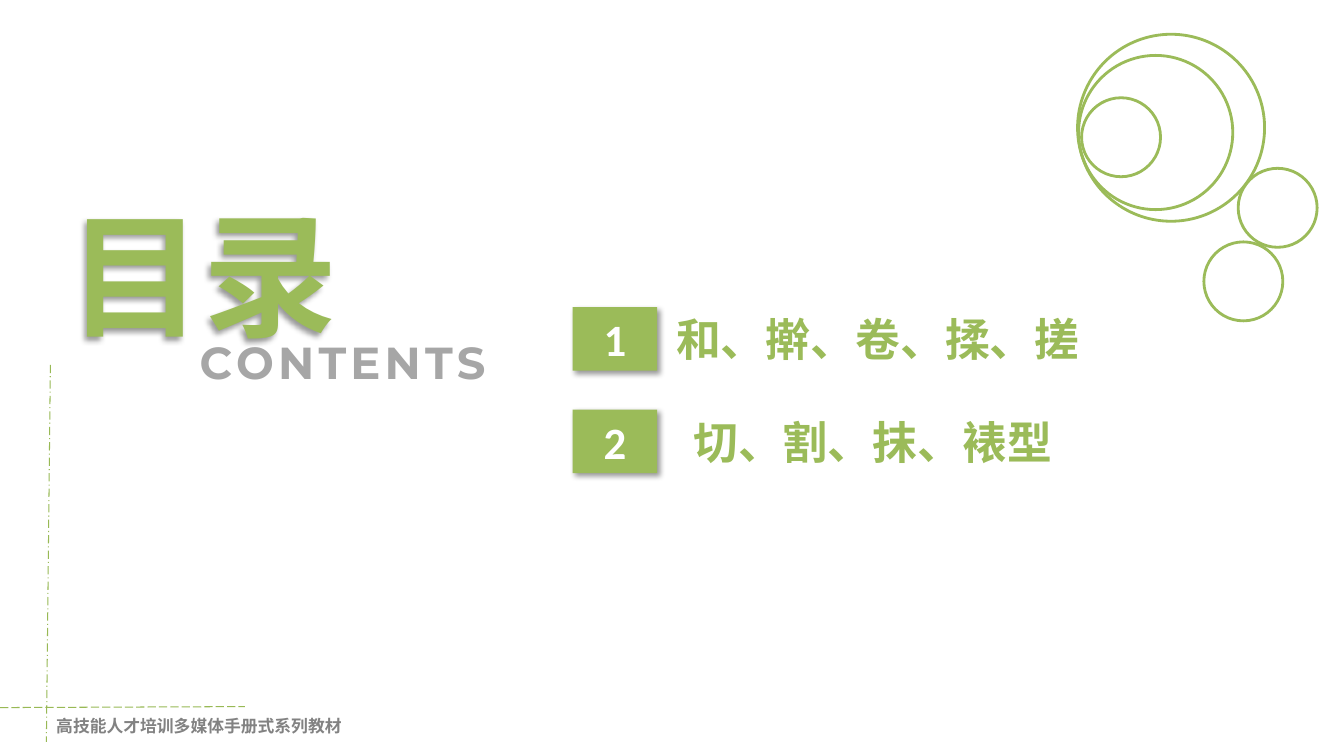
import dataclasses
import typing

import lxml.etree
import pptx
import pptx.dml.color
import pptx.enum.dml
import pptx.enum.shapes
import pptx.enum.text
import pptx.oxml.ns
import pptx.util

RGBColor = pptx.dml.color.RGBColor
ALIGN = pptx.enum.text.PP_ALIGN
DASH = pptx.enum.dml.MSO_LINE
SHAPE = pptx.enum.shapes.MSO_SHAPE
qn = pptx.oxml.ns.qn

GREEN = RGBColor(0x9B, 0xBB, 0x59)
GUIDE_GREEN = RGBColor(0x98, 0xB9, 0x55)
CONTENTS_GREY = RGBColor(0xA6, 0xA6, 0xA6)
FOOTER_GREY = RGBColor(0x82, 0x82, 0x82)
WHITE = RGBColor(0xFF, 0xFF, 0xFF)
BLACK = RGBColor(0x00, 0x00, 0x00)

CJK_FONT = "Noto Sans CJK SC"
SLIDE_WIDTH = pptx.util.Inches(13.33)
SLIDE_HEIGHT = pptx.util.Inches(7.5)
COLUMNS, ROWS = 80, 45

BADGE_COLUMN, BADGE_COLUMNS, BADGE_ROWS = 34.08, 5.04, 3.78
FIRST_ENTRY_ROW, ENTRY_PITCH = 18.28, 6.1


@dataclasses.dataclass(frozen=True)
class Area:
    column: float
    row: float
    columns: float
    rows: float

    def emu(self) -> tuple[int, int, int, int]:
        return (across(self.column), down(self.row),
                across(self.columns), down(self.rows))


@dataclasses.dataclass(frozen=True)
class Style:
    size: float
    font: str
    color: RGBColor
    align: ALIGN = ALIGN.CENTER
    spacing: float = 0


@dataclasses.dataclass(frozen=True)
class Shadow:
    blur: float
    distance: float
    degrees: int


@dataclasses.dataclass(frozen=True)
class Caption:
    text: str
    area: Area
    style: Style
    shadow: typing.Optional[Shadow] = None


@dataclasses.dataclass(frozen=True)
class Guide:
    start: tuple[float, float]
    end: tuple[float, float]
    dash: DASH


@dataclasses.dataclass(frozen=True)
class Ring:
    column: float
    row: float
    diameter: float


@dataclasses.dataclass(frozen=True)
class Entry:
    topic: str
    column: float
    columns: float


BADGE_STYLE = Style(32, "Calibri", WHITE)
TOPIC_STYLE = Style(32, CJK_FONT, GREEN, ALIGN.LEFT)
SOFT_SHADOW = Shadow(4, 3, 45)

GUIDES = [
    Guide((3, 21.72), (2.76, 44.16), DASH.LONG_DASH_DOT),
    Guide((0, 42.12), (14.58, 42.06), DASH.LONG_DASH),
]
RINGS = [
    Ring(64.14, 2.04, 11.13),
    Ring(64.2, 3.3, 9.18),
    Ring(73.7, 10.02, 4.7),
    Ring(64.38, 5.82, 4.7),
    Ring(71.66, 14.4, 4.7),
]
CAPTIONS = [
    Caption("高技能人才培训多媒体手册式系列教材", Area(2.76, 42.3, 18.36, 1.8),
            Style(12, "Times New Roman", FOOTER_GREY, ALIGN.LEFT)),
    Caption("目录", Area(0.3, 11.16, 23.58, 10.32),
            Style(96, CJK_FONT, GREEN), Shadow(4, 3, 135)),
    Caption("CONTENTS", Area(10.5, 19.62, 19.8, 3.84),
            Style(32, "Montserrat", CONTENTS_GREY, spacing=3)),
]
ENTRIES = [
    Entry("和、擀、卷、揉、搓", 39.66, 26),
    Entry("切、割、抹、裱型", 40.68, 23.5),
]


def across(columns: float) -> int:
    return round(SLIDE_WIDTH * columns / COLUMNS)


def down(rows: float) -> int:
    return round(SLIDE_HEIGHT * rows / ROWS)


def write(frame: pptx.text.text.TextFrame, text: str, style: Style) -> None:
    paragraph = frame.paragraphs[0]
    paragraph.text = text
    paragraph.alignment = style.align
    font = paragraph.font
    font.size = pptx.util.Pt(style.size)
    font.name = style.font
    font.bold = True
    font.color.rgb = style.color
    properties = paragraph._p.pPr.find(qn("a:defRPr"))
    if style.spacing:
        properties.set("spc", str(round(style.spacing * 100)))
    east_asian = lxml.etree.Element(qn("a:ea"), typeface=CJK_FONT)
    properties.find(qn("a:latin")).addnext(east_asian)


def cast_shadow(shape: pptx.shapes.autoshape.Shape, shadow: Shadow) -> None:
    shape.shadow.inherit = False
    effects = shape._element.spPr.find(qn("a:effectLst"))
    outer = lxml.etree.SubElement(
        effects, qn("a:outerShdw"),
        blurRad=str(pptx.util.Pt(shadow.blur)),
        dist=str(pptx.util.Pt(shadow.distance)),
        dir=str(shadow.degrees * 60000), algn="ctr", rotWithShape="0")
    color = lxml.etree.SubElement(outer, qn("a:srgbClr"), val=str(BLACK))
    lxml.etree.SubElement(color, qn("a:alpha"), val="40000")


def draw_caption(slide: pptx.slide.Slide, caption: Caption) -> None:
    box = slide.shapes.add_textbox(*caption.area.emu())
    box.text_frame.word_wrap = True
    write(box.text_frame, caption.text, caption.style)
    if caption.shadow:
        cast_shadow(box, caption.shadow)


def draw_guide(slide: pptx.slide.Slide, guide: Guide) -> None:
    (x1, y1), (x2, y2) = guide.start, guide.end
    connector = slide.shapes.add_connector(
        pptx.enum.shapes.MSO_CONNECTOR.STRAIGHT,
        across(x1), down(y1), across(x2), down(y2))
    connector.line.color.rgb = GUIDE_GREEN
    connector.line.width = pptx.util.Pt(0.75)
    connector.line.dash_style = guide.dash
    lxml.etree.SubElement(connector._element.spPr, qn("a:effectLst"))


def draw_ring(slide: pptx.slide.Slide, ring: Ring) -> None:
    area = Area(ring.column, ring.row, ring.diameter, ring.diameter)
    circle = slide.shapes.add_shape(SHAPE.OVAL, *area.emu())
    circle.shadow.inherit = False
    circle.fill.background()
    circle.line.color.rgb = GREEN
    circle.line.width = pptx.util.Pt(2)


def draw_entry(slide: pptx.slide.Slide, number: int, entry: Entry) -> None:
    row = FIRST_ENTRY_ROW + (number - 1) * ENTRY_PITCH
    area = Area(BADGE_COLUMN, row, BADGE_COLUMNS, BADGE_ROWS)
    badge = slide.shapes.add_shape(SHAPE.RECTANGLE, *area.emu())
    badge.fill.solid()
    badge.fill.fore_color.rgb = GREEN
    badge.line.fill.background()
    cast_shadow(badge, SOFT_SHADOW)
    badge.text_frame.vertical_anchor = pptx.enum.text.MSO_ANCHOR.MIDDLE
    write(badge.text_frame, str(number), BADGE_STYLE)
    topic_area = Area(entry.column, row, entry.columns, BADGE_ROWS)
    draw_caption(slide, Caption(entry.topic, topic_area, TOPIC_STYLE))


def main() -> None:
    deck = pptx.Presentation()
    deck.slide_width, deck.slide_height = SLIDE_WIDTH, SLIDE_HEIGHT
    slide = deck.slides.add_slide(deck.slide_layouts[6])
    for guide in GUIDES:
        draw_guide(slide, guide)
    for ring in RINGS:
        draw_ring(slide, ring)
    for caption in CAPTIONS:
        draw_caption(slide, caption)
    for number, entry in enumerate(ENTRIES, start=1):
        draw_entry(slide, number, entry)
    deck.save("out.pptx")


if __name__ == "__main__":
    main()
